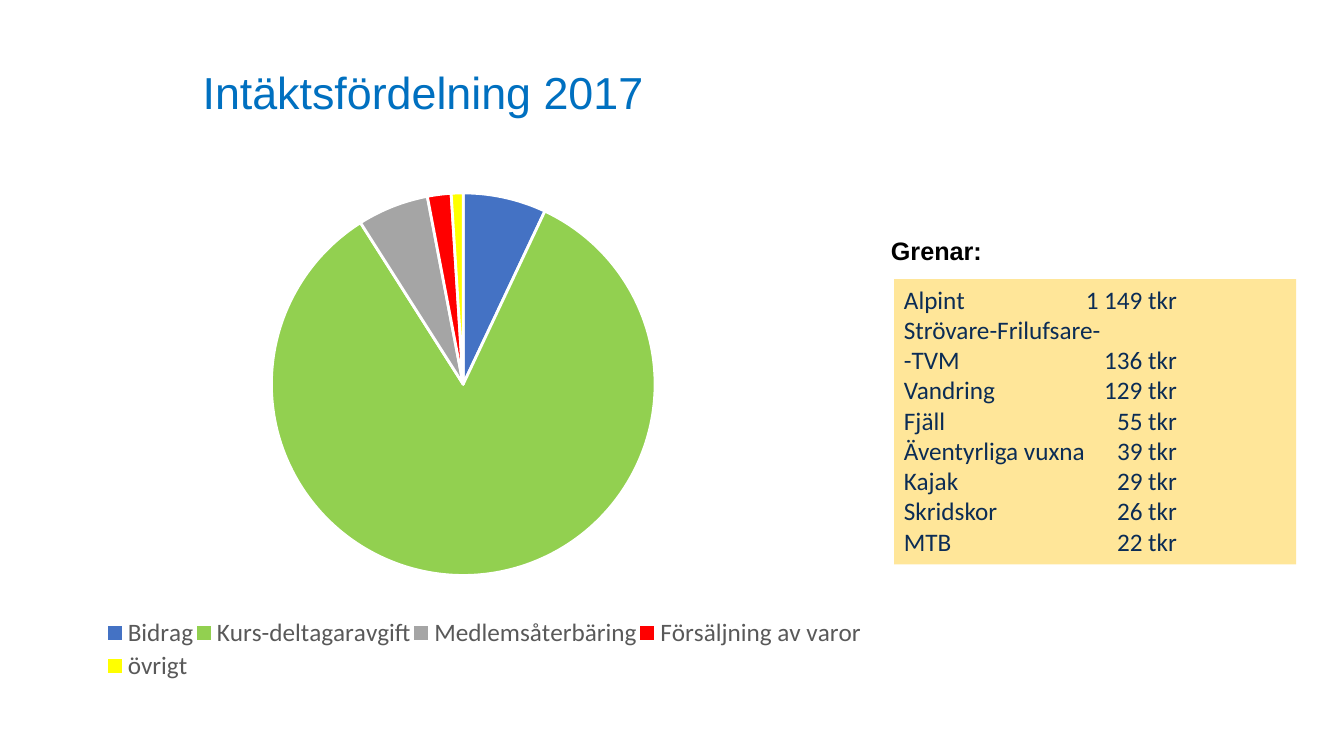
"""Build the slide on how the 2017 revenue was divided."""
from dataclasses import dataclass

from lxml.etree import SubElement
from pptx import Presentation
from pptx.chart.data import CategoryChartData
from pptx.dml.color import RGBColor
from pptx.enum.chart import XL_CHART_TYPE, XL_LEGEND_POSITION
from pptx.enum.shapes import MSO_SHAPE
from pptx.enum.text import MSO_ANCHOR, MSO_AUTO_SIZE, PP_ALIGN
from pptx.oxml import parse_xml
from pptx.oxml.ns import nsdecls, qn
from pptx.util import Pt


@dataclass(frozen=True)
class Theme:
    heading_font: str = "Arial"
    body_font: str = "Calibri"
    title_size: int = 32
    text_size: int = 18
    chart_size: int = 10
    title: str = "0070C0"
    heading: str = "000000"
    branch_text: str = "0B2C55"
    branch_fill: str = "FFE699"
    legend: str = "595959"
    slice_border: str = "FFFFFF"


@dataclass(frozen=True)
class Box:
    left: float
    top: float
    width: float
    height: float

    def lengths(self) -> tuple:
        return Pt(self.left), Pt(self.top), Pt(self.width), Pt(self.height)


@dataclass(frozen=True)
class Revenue:
    source: str
    percent: int
    color: str


@dataclass(frozen=True)
class Branch:
    name: str
    amount: str = ""

    def line(self) -> str:
        return f"{self.name}\t{self.amount}" if self.amount else self.name


THEME = Theme()
AMOUNT_TAB = Pt(195)
PIE_AREA = Box(0.04, 0, 0.96, 0.78)
LEGEND_AREA = Box(0.09, 0.86, 0.91, 0.14)
REVENUES = [
    Revenue("Bidrag", 7, "4472C4"),
    Revenue("Kurs-deltagaravgift", 84, "92D050"),
    Revenue("Medlemsåterbäring", 6, "A5A5A5"),
    Revenue("Försäljning av varor", 2, "FF0000"),
    Revenue("övrigt", 1, "FFFF00"),
]
BRANCHES = [
    Branch("Alpint", "1 149 tkr"),
    Branch("Strövare-Frilufsare-"),
    Branch("-TVM", "136 tkr"),
    Branch("Vandring", "129 tkr"),
    Branch("Fjäll", "55 tkr"),
    Branch("Äventyrliga vuxna", "39 tkr"),
    Branch("Kajak", "29 tkr"),
    Branch("Skridskor", "26 tkr"),
    Branch("MTB", "22 tkr"),
]


def style_font(font, name: str, size: int, color: str, bold: bool = False) -> None:
    font.name = name
    font.size = Pt(size)
    font.bold = bold
    font.color.rgb = RGBColor.from_string(color)


def fill_title(title, box: Box) -> None:
    title.left, title.top, title.width, title.height = box.lengths()
    frame = title.text_frame
    frame.text = "Intäktsfördelning 2017"
    frame.vertical_anchor = MSO_ANCHOR.MIDDLE
    paragraph = frame.paragraphs[0]
    paragraph.alignment = PP_ALIGN.LEFT
    paragraph.line_spacing = 0.9
    style_font(paragraph.font, THEME.heading_font, THEME.title_size, THEME.title)


def set_chart_layout(part, position: int, area: Box, target: str = "") -> None:
    for automatic in part.findall(qn("c:layout")):
        part.remove(automatic)
    part.insert(position, parse_xml(
        f'<c:layout {nsdecls("c")}><c:manualLayout>{target}'
        '<c:xMode val="edge"/><c:yMode val="edge"/>'
        f'<c:x val="{area.left}"/><c:y val="{area.top}"/>'
        f'<c:w val="{area.width}"/><c:h val="{area.height}"/>'
        '</c:manualLayout></c:layout>'))


def add_revenue_pie(slide, box: Box, revenues: list[Revenue]) -> None:
    shares = CategoryChartData()
    shares.categories = [revenue.source for revenue in revenues]
    shares.add_series("Series 1", [revenue.percent for revenue in revenues])
    chart = slide.shapes.add_chart(XL_CHART_TYPE.PIE, *box.lengths(), shares).chart
    chart.has_title = False
    style_font(chart.font, THEME.body_font, THEME.chart_size, THEME.heading)
    chart.has_legend = True
    chart.legend.position = XL_LEGEND_POSITION.BOTTOM
    chart.legend.include_in_layout = False
    style_font(chart.legend.font, THEME.body_font, THEME.text_size, THEME.legend)

    pie = chart.plots[0]
    pie.vary_by_categories = True
    for index, revenue in enumerate(revenues):
        wedge = pie.series[0].points[index].format
        wedge.fill.solid()
        wedge.fill.fore_color.rgb = RGBColor.from_string(revenue.color)
        wedge.line.color.rgb = RGBColor.from_string(THEME.slice_border)
        wedge.line.width = Pt(2)

    drawing = chart.element.chart
    set_chart_layout(drawing.plotArea, 0, PIE_AREA, '<c:layoutTarget val="inner"/>')
    set_chart_layout(drawing.find(qn("c:legend")), 1, LEGEND_AREA)


def add_branches(slide, box: Box, branches: list[Branch]) -> None:
    panel = slide.shapes.add_shape(MSO_SHAPE.RECTANGLE, *box.lengths())
    panel.shadow.inherit = False
    panel.fill.solid()
    panel.fill.fore_color.rgb = RGBColor.from_string(THEME.branch_fill)
    panel.line.fill.background()
    frame = panel.text_frame
    frame.word_wrap = True
    frame.auto_size = MSO_AUTO_SIZE.SHAPE_TO_FIT_TEXT
    frame.vertical_anchor = MSO_ANCHOR.TOP
    frame.text = "\n".join(branch.line() for branch in branches)
    for paragraph in frame.paragraphs:
        paragraph.alignment = PP_ALIGN.LEFT
        tabs = SubElement(paragraph._p.get_or_add_pPr(), qn("a:tabLst"))
        SubElement(tabs, qn("a:tab"), pos=str(AMOUNT_TAB), algn="r")
        style_font(paragraph.font, THEME.body_font, THEME.text_size, THEME.branch_text)


def add_branch_heading(slide, box: Box) -> None:
    frame = slide.shapes.add_textbox(*box.lengths()).text_frame
    frame.word_wrap = True
    frame.auto_size = MSO_AUTO_SIZE.SHAPE_TO_FIT_TEXT
    frame.text = "Grenar:"
    style_font(frame.paragraphs[0].font, THEME.heading_font, THEME.text_size,
               THEME.heading, bold=True)


def main() -> None:
    presentation = Presentation()
    presentation.slide_width, presentation.slide_height = Pt(960), Pt(540)
    slide = presentation.slides.add_slide(presentation.slide_layouts[5])
    fill_title(slide.shapes.title, Box(137.5, 26.6, 404.6, 82.8))
    add_revenue_pie(slide, Box(20.9, 136.8, 596.2, 351.4), REVENUES)
    add_branches(slide, Box(638.6, 199.4, 287.3, 203.8), BRANCHES)
    add_branch_heading(slide, Box(629.3, 164.9, 247.7, 28.8))
    presentation.save("out.pptx")


if __name__ == "__main__":
    main()
